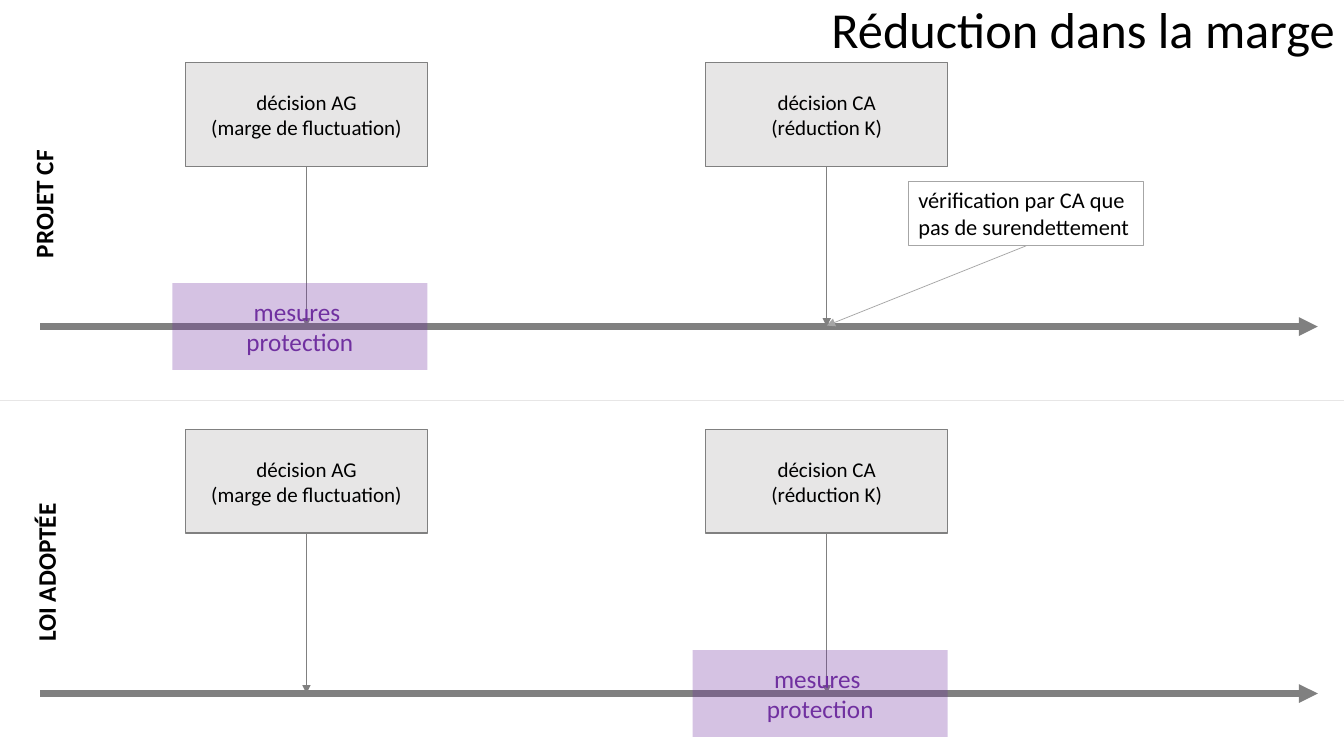
from lxml import etree
from pptx import Presentation
from pptx import util as u
from pptx.dml.color import RGBColor
from pptx.enum import shapes, text
from pptx.oxml import ns

PX = 9144  # 100 px to the inch
BLACK = RGBColor(0x00, 0x00, 0x00)
GREY = RGBColor(0x80, 0x80, 0x80)
MID_GREY = RGBColor(0xA6, 0xA6, 0xA6)
PALE_GREY = RGBColor(0xE7, 0xE6, 0xE6)
PURPLE = RGBColor(0x70, 0x30, 0xA0)

CENTRE = text.PP_ALIGN.CENTER
LEFT = text.PP_ALIGN.LEFT

# Decisions: left edge and wording
DECISIONS = {
    "AG": (184, "décision AG\n(marge de fluctuation)"),
    "CA": (700, "décision CA\n(réduction K)"),
}
# Timelines: name, label box, top of the decisions, decision that is protected
TIMELINES = [
    ("PROJET CF", (-21, 182, 128, 40), 62, "AG"),
    ("LOI ADOPTÉE", (-34, 547, 159, 40), 426, "CA"),
]
DECISION_WIDTH, DECISION_HEIGHT = 240, 103
AXIS_DROP = 262  # from the top of the decisions to the time axis
PROTECTION_WIDTH, PROTECTION_HEIGHT = 253, 86


class Board:
    def __init__(self, slide, font):
        self.slide = slide
        self.font = font

    def fill_text(self, frame, wording, size, color=BLACK, align=LEFT, bold=False):
        frame.text = wording
        for paragraph in frame.paragraphs:
            paragraph.alignment = align
            paragraph.font.color.rgb = color
            style = {"name": self.font, "size": u.Pt(size), "bold": bold}
            for key, value in style.items():
                setattr(paragraph.font, key, value)

    def title(self, wording, left, top, width, height):
        title = self.slide.shapes.title
        place = {"left": left, "top": top, "width": width, "height": height}
        for key, value in place.items():
            setattr(title, key, value * PX)
        frame = title.text_frame
        frame.auto_size = text.MSO_AUTO_SIZE.NONE
        frame.vertical_anchor = text.MSO_ANCHOR.TOP
        self.fill_text(frame, wording, 36, align=text.PP_ALIGN.RIGHT)
        frame.paragraphs[0].line_spacing = 0.9

    def box(self, wording, place, size, color=BLACK, fill=None, alpha=None,
            line=None, weight=1):
        box = self.slide.shapes.add_shape(
            shapes.MSO_SHAPE.RECTANGLE, *(n * PX for n in place))
        box.shadow.inherit = False
        if fill is None:
            box.fill.background()
        else:
            box.fill.solid()
            box.fill.fore_color.rgb = fill
        if alpha is not None:
            tint = box._element.spPr.find(".//" + ns.qn("a:srgbClr"))
            etree.SubElement(tint, ns.qn("a:alpha"), val=str(alpha * 1000))
        if line is None:
            box.line.fill.background()
        else:
            box.line.color.rgb = line
            box.line.width = u.Pt(weight)
        box.text_frame.word_wrap = True
        box.text_frame.vertical_anchor = text.MSO_ANCHOR.MIDDLE
        self.fill_text(box.text_frame, wording, size, color, CENTRE)
        return box

    def note(self, wording, place):
        note = self.box(wording, place, 16, line=MID_GREY, weight=0.75)
        note.text_frame.word_wrap = False
        note.text_frame.vertical_anchor = text.MSO_ANCHOR.TOP
        note.text_frame.paragraphs[0].alignment = LEFT
        return note

    def label(self, wording, place):
        """Bold text that reads upwards."""
        label = self.slide.shapes.add_textbox(*(n * PX for n in place))
        label.rotation = 270
        label.text_frame.word_wrap = False
        self.fill_text(label.text_frame, wording, 18, bold=True)

    def line(self, start, end, color, weight, arrow=True, origin=None):
        """Straight line; origin is a box whose bottom middle it leaves from."""
        line = self.slide.shapes.add_connector(
            shapes.MSO_CONNECTOR.STRAIGHT, *(n * PX for n in start + end))
        line.line.color.rgb = color
        line.line.width = u.Pt(weight)
        properties = line._element.spPr
        if arrow:
            etree.SubElement(properties.find(ns.qn("a:ln")), ns.qn("a:tailEnd"),
                             type="triangle")
        etree.SubElement(properties, ns.qn("a:effectLst"))
        if origin is not None:
            line.begin_connect(origin, 2)


def draw_timeline(board, name, label_place, top, protected):
    axis = top + AXIS_DROP
    board.line((40, axis), (1307, axis), GREY, 4.5)
    for left, wording in DECISIONS.values():
        decision = board.box(wording, (left, top, DECISION_WIDTH, DECISION_HEIGHT),
                             15, fill=PALE_GREY, line=GREY)
        middle = left + DECISION_WIDTH // 2
        board.line((middle, top + DECISION_HEIGHT), (middle, axis), GREY, 0.5,
                   origin=decision)
    right = DECISIONS[protected][0] + DECISION_WIDTH
    board.box("mesures \nprotection",
              (right - PROTECTION_WIDTH, axis - PROTECTION_HEIGHT // 2,
               PROTECTION_WIDTH, PROTECTION_HEIGHT),
              18, PURPLE, fill=PURPLE, alpha=29)
    board.label(name, label_place)


def main():
    deck = Presentation()
    deck.slide_width, deck.slide_height = 1333 * PX, 750 * PX
    board = Board(deck.slides.add_slide(deck.slide_layouts[5]), "Calibri")
    board.title("Réduction dans la marge", 75, 0, 1259, 107)
    for timeline in TIMELINES:
        draw_timeline(board, *timeline)
    check = board.note("vérification par CA que \vpas de surendettement",
                       (901, 180, 233, 64))
    board.line((1018, 244), (820, 323), MID_GREY, 0.5, origin=check)
    board.line((0, 397), (1333, 397), PALE_GREY, 0.5, arrow=False)
    deck.save("out.pptx")


if __name__ == "__main__":
    main()
